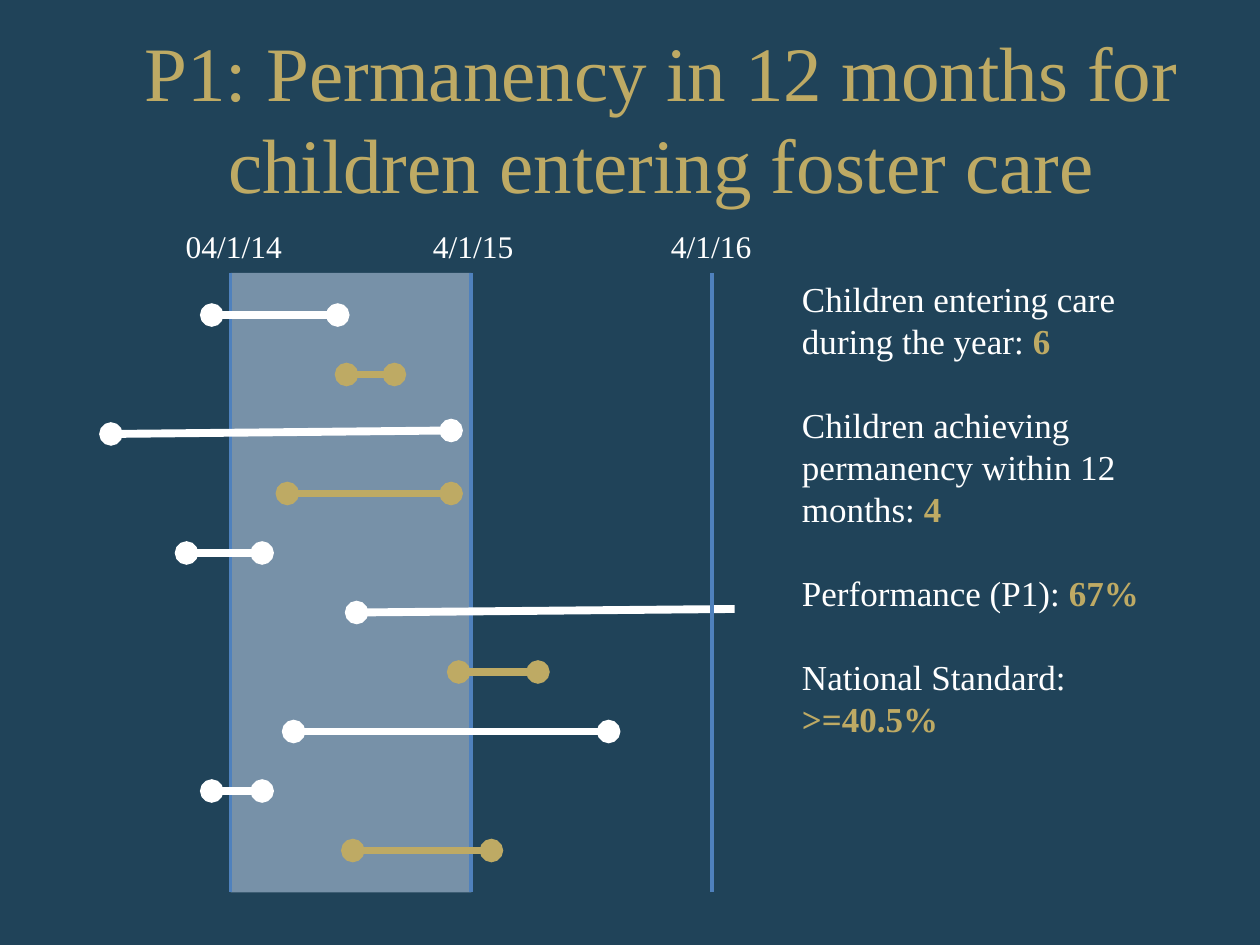
from lxml import etree
from pptx import Presentation
from pptx.dml.color import RGBColor
from pptx.enum.shapes import MSO_CONNECTOR, MSO_SHAPE
from pptx.enum.text import MSO_ANCHOR, MSO_AUTO_SIZE, PP_ALIGN
from pptx.oxml.ns import qn
from pptx.util import Pt

NAVY = RGBColor(0x20, 0x43, 0x59)
GOLD = RGBColor(0xBE, 0xAA, 0x64)
WHITE = RGBColor(0xFF, 0xFF, 0xFF)
BLUE = RGBColor(0x4F, 0x81, 0xBD)
PALE_BLUE = RGBColor(0xB9, 0xCD, 0xE5)
FONT = "Times New Roman"
STRAIGHT = MSO_CONNECTOR.STRAIGHT
RECTANGLE = MSO_SHAPE.RECTANGLE
CENTER = PP_ALIGN.CENTER
MIDDLE = MSO_ANCHOR.MIDDLE
NO_FIT = MSO_AUTO_SIZE.NONE

# Date, centre of its label
DATES = [("04/1/14", 133.6), ("4/1/15", 270.4), ("4/1/16", 406.4)]
YEAR = 137.5

# Foster care stays, top to bottom: start, end, rise, colour, whether it has ended
STAYS = [
    (121, 193, 0, WHITE, True),
    (198, 225.4, 0, GOLD, True),
    (63.4, 257.8, 2, WHITE, True),
    (164.2, 257.8, 0, GOLD, True),
    (106.6, 149.8, 0, WHITE, True),
    (203.8, 419.8, 2, WHITE, False),
    (262.1, 307.4, 0, GOLD, True),
    (167.8, 347.8, 0, WHITE, True),
    (121, 149.8, 0, WHITE, True),
    (201.6, 280.8, 0, GOLD, True),
]
ROW_STEP = 34

MEASURES = [
    ("Children entering care during the year: ", "6"),
    ("Children achieving permanency within 12 months: ", "4"),
    ("Performance (P1): ", "67%"),
    ("National Standard: ", ">=40.5%"),
]


def add_run(paragraph, text, size, color, bold=False):
    run = paragraph.add_run()
    run.text = text
    formats = {"name": FONT, "size": Pt(size), "bold": bold}
    for key, value in formats.items():
        setattr(run.font, key, value)
    run.font.color.rgb = color


def add_line(slide, x1, y1, x2, y2, color, width, ends=()):
    line = slide.shapes.add_connector(STRAIGHT, Pt(x1), Pt(y1), Pt(x2), Pt(y2))
    line.line.color.rgb = color
    line.line.width = Pt(width)
    outline = line.line._get_or_add_ln()
    for end in ends:
        etree.SubElement(outline, qn(f"a:{end}"), type="oval")
    etree.SubElement(line._element.spPr, qn("a:effectLst"))


def add_title(slide, left, top, width, height):
    title = slide.shapes.title
    box = {"left": left, "top": top, "width": width, "height": height}
    for key, value in box.items():
        setattr(title, key, Pt(value))
    frame = title.text_frame
    frame.auto_size = NO_FIT
    frame.vertical_anchor = MIDDLE
    paragraph = frame.paragraphs[0]
    paragraph.alignment = CENTER
    properties = paragraph._p.get_or_add_pPr()
    properties.set("marL", str(Pt(36)))
    properties.set("indent", "0")
    add_run(paragraph, "P1: Permanency in 12 months for children entering foster care", 44, GOLD)


def add_date(slide, x, top, height, date, label_center):
    add_line(slide, x, top, x, top + height, BLUE, 2)
    label = slide.shapes.add_textbox(Pt(label_center - 35), Pt(top - 30), Pt(70), Pt(29))
    label.text_frame.word_wrap = False
    paragraph = label.text_frame.paragraphs[0]
    paragraph.alignment = CENTER
    add_run(paragraph, date, 18, WHITE)


def add_timeline(slide, left, top, height):
    # Entry year window
    window = slide.shapes.add_shape(RECTANGLE, Pt(left), Pt(top), Pt(YEAR), Pt(height))
    window.shadow.inherit = False
    window.line.fill.background()
    window.fill.solid()
    window.fill.fore_color.rgb = PALE_BLUE
    tint = window._element.spPr.find(f"{qn('a:solidFill')}/{qn('a:srgbClr')}")
    etree.SubElement(tint, qn("a:alpha"), val="57000")

    # The first two dates lie behind the stays, the last one in front
    for i, (date, center) in enumerate(DATES[:2]):
        add_date(slide, left + i * YEAR, top, height, date, center)
    for row, (start, end, rise, color, ended) in enumerate(STAYS):
        y = top + 24 + row * ROW_STEP
        ends = ("headEnd", "tailEnd") if ended else ("headEnd",)
        add_line(slide, start, y, end, y - rise, color, 4.5, ends)
    add_date(slide, left + 2 * YEAR, top, height, *DATES[2])


def add_measures(slide, left, top, width, height):
    frame = slide.shapes.add_textbox(Pt(left), Pt(top), Pt(width), Pt(height)).text_frame
    frame.word_wrap = True
    for i, (label, value) in enumerate(MEASURES):
        paragraph = frame.add_paragraph() if i else frame.paragraphs[0]
        paragraph.space_before = Pt(24 if i else 0)
        add_run(paragraph, label, 20, WHITE)
        add_run(paragraph, value, 20, GOLD, bold=True)


def main():
    deck = Presentation()
    deck.slide_width, deck.slide_height = Pt(720), Pt(540)
    slide = deck.slides.add_slide(deck.slide_layouts[5])
    slide.background.fill.solid()
    slide.background.fill.fore_color.rgb = NAVY

    add_title(slide, 0, 21.6, 720, 90)
    add_timeline(slide, 131.8, 156, 354)
    add_measures(slide, 451.2, 155, 209, 274)
    deck.save("out.pptx")


if __name__ == "__main__":
    main()
